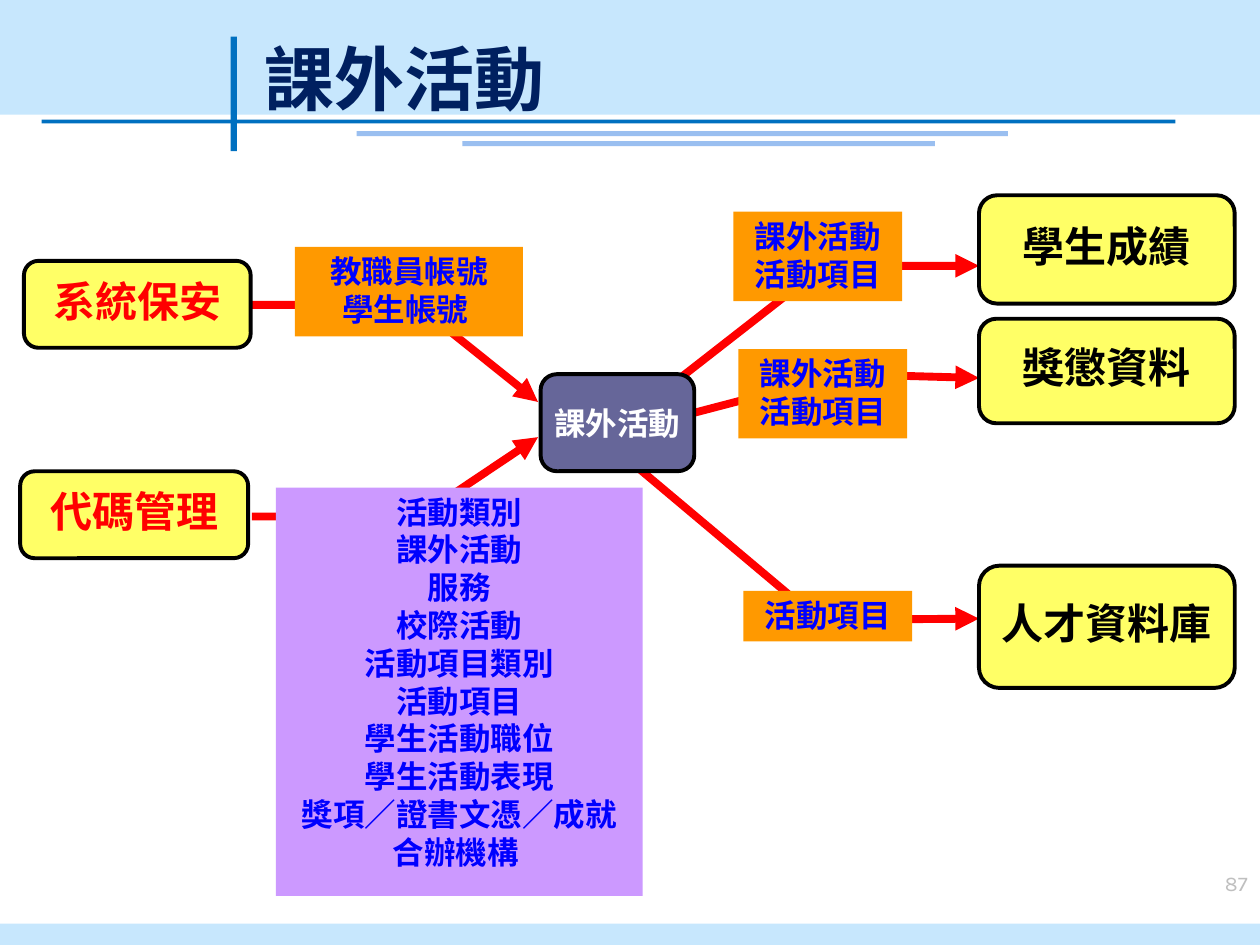
from lxml import etree
from pptx import Presentation, util as u
from pptx.dml.color import RGBColor
from pptx.enum import shapes, text
from pptx.oxml.ns import qn

CJK = "Noto Sans CJK SC"
RECT, ROUNDED = shapes.MSO_SHAPE.RECTANGLE, shapes.MSO_SHAPE.ROUNDED_RECTANGLE
TOP, MIDDLE, BOTTOM = text.MSO_ANCHOR.TOP, text.MSO_ANCHOR.MIDDLE, text.MSO_ANCHOR.BOTTOM
LEFT, CENTER, RIGHT = text.PP_ALIGN.LEFT, text.PP_ALIGN.CENTER, text.PP_ALIGN.RIGHT

# Positions are (left, top, width, height) in inches
BARS = [
    ((0, 0, 10, 0.91), "C7E7FD"),
    ((0, 7.33, 10, 0.17), "C7E7FD"),
    ((1.83, 0.29, 0.05, 0.91), "0070C0"),
    ((0.33, 0.95, 9, 0.03), "0070C0"),
    ((2.83, 1.04, 5.17, 0.04), "9ABFF0"),
    ((3.67, 1.12, 3.75, 0.04), "9ABFF0"),
]
TITLE = "課外活動"
PAGE_NUMBER = "87"

# Each flow runs through its points and ends in an arrowhead
FLOWS = [
    [(2, 4.1), (3.33, 4.1), (4.27, 3.47)],
    [(1.97, 2.42), (3.31, 2.42), (4.27, 3.19)],
    [(5.06, 3.71), (6.5, 4.92), (7.77, 4.91)],
    [(5.36, 3.03), (6.54, 2.11), (7.77, 2.11)],
    [(5.38, 3.31), (6.68, 2.97), (7.77, 3)],
]
SOURCES = [
    ("代碼管理", (0.16, 3.74, 1.81, 0.69)),
    ("系統保安", (0.19, 2.07, 1.8, 0.69)),
]
TARGETS = [
    ("獎懲資料", (7.77, 2.53, 2.03, 0.83)),
    ("學生成績", (7.77, 1.55, 2.03, 0.86)),
    ("人才資料庫", (7.77, 4.49, 2.03, 0.97)),
]
HUB = ("課外活動", (4.29, 2.97, 1.22, 0.77))
DATA_PASSED = [
    (["教職員帳號", "學生帳號 "], (2.34, 1.96, 1.81, 0.71), "FF9900"),
    (["活動類別", "課外活動", "服務", "校際活動", "活動項目類別", "活動項目",
      "學生活動職位", "學生活動表現", "獎項／證書文憑／成就", "合辦機構 "],
     (2.19, 3.87, 2.91, 3.24), "CC99FF"),
    (["課外活動", "活動項目"], (5.82, 1.68, 1.34, 0.71), "FF9900"),
    (["課外活動", "活動項目"], (5.86, 2.77, 1.34, 0.71), "FF9900"),
    (["活動項目"], (5.9, 4.69, 1.34, 0.4), "FF9900"),
]


def rgb(color):
    return RGBColor.from_string(color)


def add_box(place, fill, kind=RECT, outline=None):
    box = slide.shapes.add_shape(kind, *map(u.Inches, place))
    box.shadow.inherit = False
    box.fill.solid()
    box.fill.fore_color.rgb = rgb(fill)
    if outline:
        box.line.color.rgb = rgb(outline)
        box.line.width = u.Pt(2.25)
    else:
        box.line.fill.background()
    return box


def write(shape, lines, size, color, font=CJK, bold=True, align=CENTER,
          anchor=TOP, insets=(0.07, 0.04), wrap=True, spacing=None):
    frame = shape.text_frame
    frame.word_wrap = wrap
    frame.vertical_anchor = anchor
    frame.margin_left = frame.margin_right = u.Inches(insets[0])
    frame.margin_top = frame.margin_bottom = u.Inches(insets[1])
    frame.text = "\n".join(lines)
    for paragraph in frame.paragraphs:
        paragraph.alignment = align
        if spacing:
            paragraph.line_spacing = spacing
        paragraph.font.size = u.Pt(size)
        paragraph.font.bold = bold
        paragraph.font.color.rgb = rgb(color)
        paragraph.font.name = font
        # East Asian characters take their own typeface
        defaults = paragraph._p.pPr.find(qn("a:defRPr"))
        etree.SubElement(defaults, qn("a:ea")).set("typeface", font)


def add_node(label, place, color, size=24, fill="FFFF66", spacing=0.85):
    node = add_box(place, fill, ROUNDED, "000000")
    write(node, [label], size, color, anchor=MIDDLE, wrap=False, spacing=spacing)


def add_flow(points):
    start, *rest = [(u.Inches(x), u.Inches(y)) for x, y in points]
    builder = slide.shapes.build_freeform(*start)
    builder.add_line_segments(rest, close=False)
    flow = builder.convert_to_shape()
    flow.shadow.inherit = False
    flow.fill.background()
    flow.line.color.rgb = rgb("FF0000")
    flow.line.width = u.Pt(4.5)
    line = flow._element.spPr.find(qn("a:ln"))
    etree.SubElement(line, qn("a:tailEnd")).set("type", "triangle")


deck = Presentation()
deck.slide_width, deck.slide_height = u.Inches(10), u.Inches(7.5)
slide = deck.slides.add_slide(deck.slide_layouts[6])

# Header, footer, page number and title
for place, fill in BARS:
    add_box(place, fill)
number = slide.shapes.add_textbox(*map(u.Inches, (8.31, 6.86, 1.69, 0.5)))
write(number, [PAGE_NUMBER], 12, "BFBFBF", font="Karla", bold=False,
      align=RIGHT, insets=(0.1, 0.05))
title = slide.shapes.add_textbox(*map(u.Inches, (2, 0.17, 7.83, 0.83)))
write(title, [TITLE], 40, "002060", align=LEFT, anchor=BOTTOM, insets=(0.1, 0.05))

# Flows lie beneath the modules and the data they carry
for points in FLOWS:
    add_flow(points)
for label, place in SOURCES:
    add_node(label, place, "FF0000")
for label, place in TARGETS:
    add_node(label, place, "000000")
for items, place, fill in DATA_PASSED:
    write(add_box(place, fill), items, 18, "0000FF")
add_node(*HUB, "FFFFFF", size=18, fill="666699", spacing=None)

deck.save("out.pptx")
